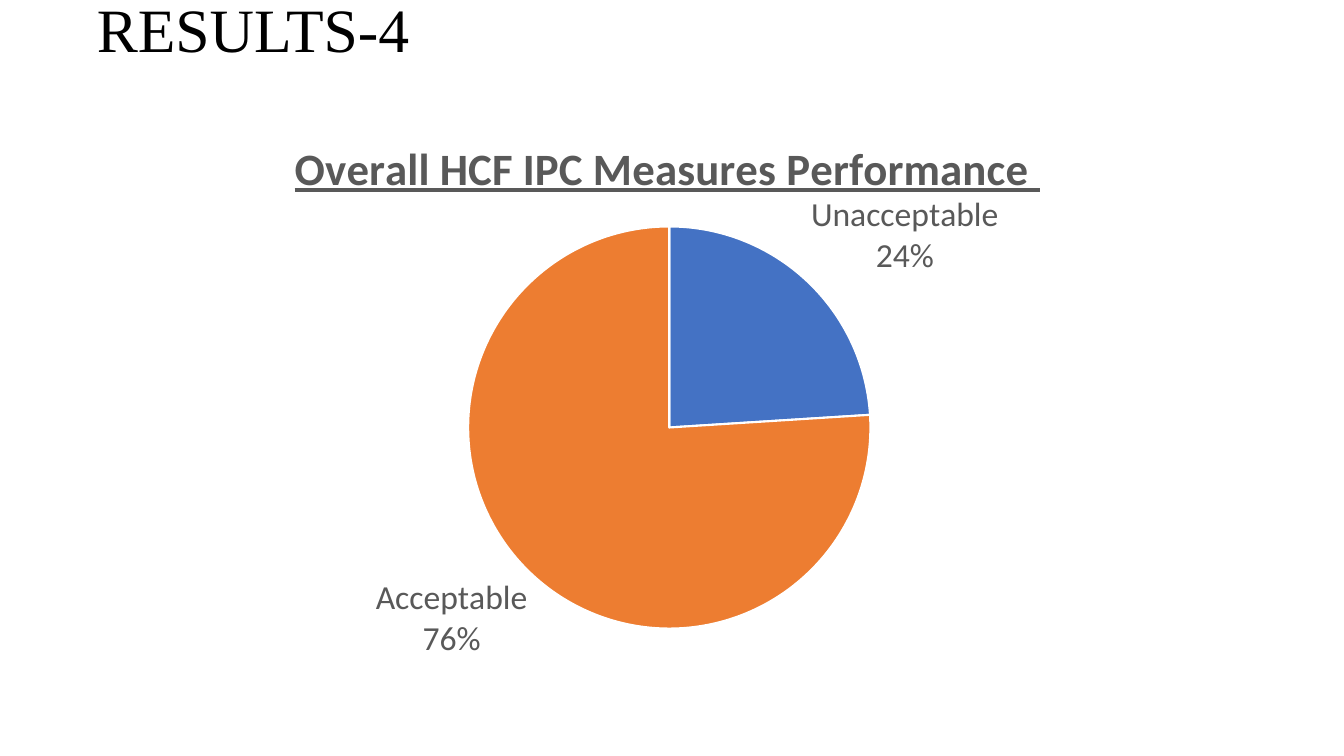
import pptx
import pptx.chart.data
import pptx.dml.color
import pptx.enum.chart
import pptx.enum.text
import pptx.oxml
import pptx.util
from dataclasses import dataclass
from pptx.util import Inches


def rgb(value):
    return pptx.dml.color.RGBColor.from_string(value)


@dataclass(frozen=True)
class Theme:
    title_font: str = "Times New Roman"
    chart_font: str = "Calibri"
    title_color: str = "000000"
    chart_text: str = "595959"
    slice_border: str = "FFFFFF"
    unacceptable: str = "4472C4"
    acceptable: str = "ED7D31"
    title_size: int = 44
    heading_size: int = 32
    label_size: int = 24
    base_size: int = 10
    border_width: float = 1.5


THEME = Theme()

# Category, percentage, slice colour
PERFORMANCE = [
    ("Unacceptable", 24, THEME.unacceptable),
    ("Acceptable", 76, THEME.acceptable),
]


def style_font(font, name, size, color, bold=False):
    font.name = name
    font.size = pptx.util.Pt(size)
    font.bold = bold
    font.color.rgb = rgb(color)


def set_layout(element, **settings):
    """Give a chart title or plot area a manual layout, in chart fractions."""
    for old_layout in element.findall(pptx.oxml.ns.qn("c:layout")):
        element.remove(old_layout)
    items = "".join(f'<c:{key} val="{value}"/>' for key, value in settings.items())
    layout = pptx.oxml.parse_xml(
        f'<c:layout {pptx.oxml.ns.nsdecls("c")}>'
        f"<c:manualLayout>{items}</c:manualLayout></c:layout>"
    )
    text = element.find(pptx.oxml.ns.qn("c:tx"))
    if text is None:
        element.insert(0, layout)
    else:
        text.addnext(layout)


def add_title(slide, text):
    title = slide.shapes.title
    title.left, title.top = Inches(0.86), Inches(-0.4)
    title.width, title.height = Inches(11.5), Inches(1.45)
    frame = title.text_frame
    frame.text = text
    frame.word_wrap = True
    frame.vertical_anchor = pptx.enum.text.MSO_ANCHOR.MIDDLE
    heading = frame.paragraphs[0]
    heading.alignment = pptx.enum.text.PP_ALIGN.LEFT
    heading.line_spacing = 0.9
    style_font(heading.font, THEME.title_font, THEME.title_size, THEME.title_color)


def add_chart_heading(chart, text):
    chart.has_title = True
    frame = chart.chart_title.text_frame
    frame.text = text
    heading = frame.paragraphs[0]
    style_font(heading.font, THEME.chart_font, THEME.heading_size,
               THEME.chart_text, bold=True)
    heading.font.underline = True
    chart.chart_title.include_in_layout = False
    set_layout(chart.chart_title._element,
               xMode="edge", yMode="edge", x=0.18, y=0.04)


def style_slices(series):
    for index, (_, _, color) in enumerate(PERFORMANCE):
        piece = series.points[index].format
        piece.fill.solid()
        piece.fill.fore_color.rgb = rgb(color)
        piece.line.color.rgb = rgb(THEME.slice_border)
        piece.line.width = pptx.util.Pt(THEME.border_width)


def add_slice_labels(plot):
    plot.has_data_labels = True
    labels = plot.data_labels
    labels.show_category_name = True
    labels.show_percentage = True
    labels.show_value = False
    labels.number_format = "0%"
    labels.number_format_is_linked = False
    labels.position = pptx.enum.chart.XL_LABEL_POSITION.OUTSIDE_END
    style_font(labels.font, THEME.chart_font, THEME.label_size, THEME.chart_text)
    # Percentage on its own line below the category
    separator = pptx.oxml.parse_xml(
        f'<c:separator {pptx.oxml.ns.nsdecls("c")}>\n</c:separator>'
    )
    labels._element.find(pptx.oxml.ns.qn("c:showBubbleSize")).addnext(separator)


def add_performance_pie(slide):
    data = pptx.chart.data.CategoryChartData()
    data.categories = [name for name, _, _ in PERFORMANCE]
    data.add_series("Series 1", [percent for _, percent, _ in PERFORMANCE])
    chart = slide.shapes.add_chart(
        pptx.enum.chart.XL_CHART_TYPE.PIE,
        Inches(0.74), Inches(1.05), Inches(11.68), Inches(5.7), data,
    ).chart
    chart.has_legend = False
    style_font(chart.font, THEME.chart_font, THEME.base_size, THEME.title_color)
    add_chart_heading(chart, "Overall HCF IPC Measures Performance ")
    pie = chart.plots[0]
    pie.vary_by_categories = True
    style_slices(pie.series[0])
    add_slice_labels(pie)
    set_layout(chart._chartSpace.chart.plotArea, layoutTarget="inner",
               xMode="edge", yMode="edge", x=0.08, y=0.21, w=0.85, h=0.7)


def main():
    deck = pptx.Presentation()
    deck.slide_width, deck.slide_height = Inches(13.33), Inches(7.5)
    slide = deck.slides.add_slide(deck.slide_layouts.get_by_name("Title Only"))
    add_title(slide, "RESULTS-4")
    add_performance_pie(slide)
    deck.save("out.pptx")


if __name__ == "__main__":
    main()
